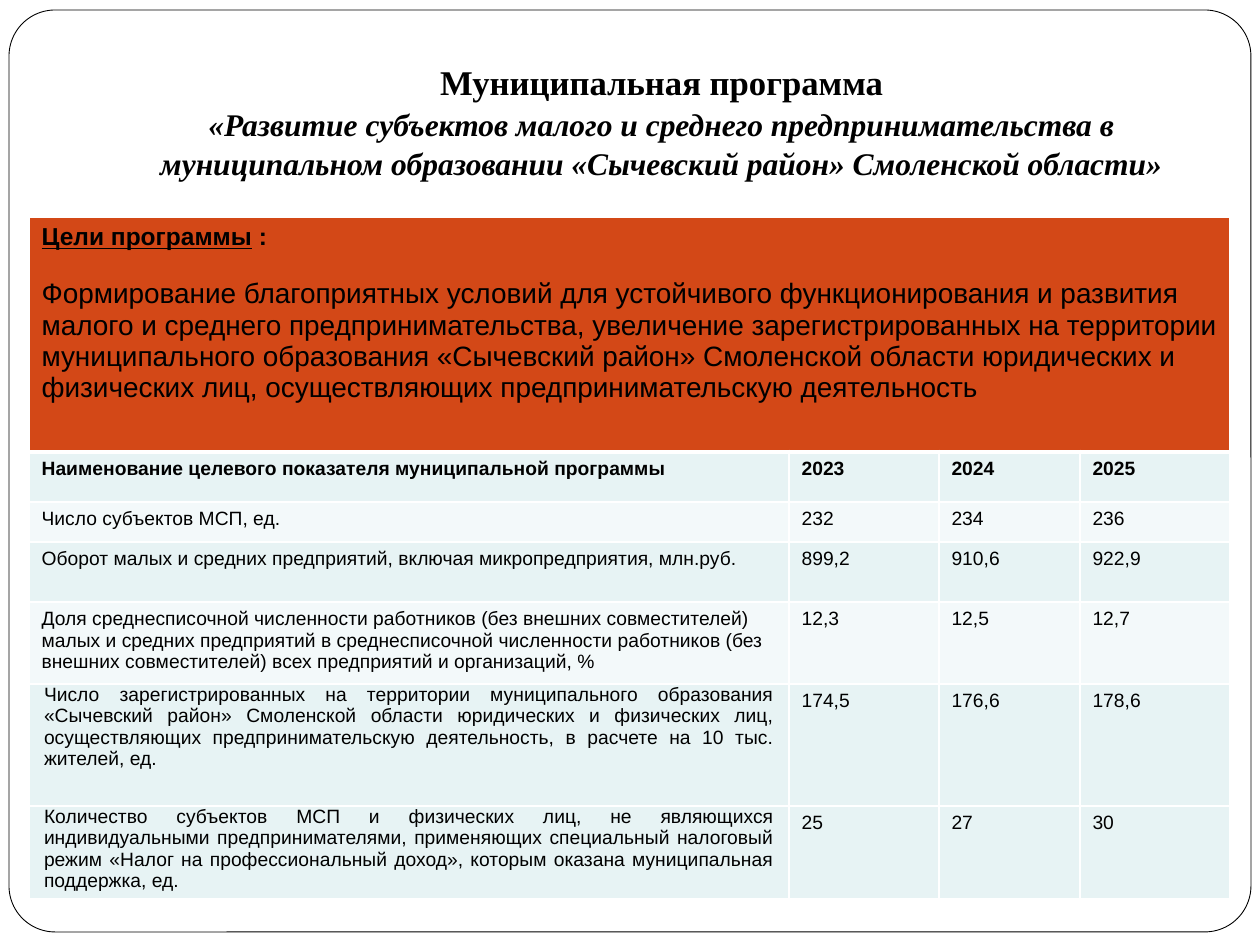
from lxml import etree
from pptx import Presentation
from pptx.dml.color import RGBColor
from pptx.enum.shapes import MSO_SHAPE
from pptx.enum.text import MSO_ANCHOR, PP_ALIGN
from pptx.oxml.ns import qn
from pptx.util import Pt

ROUNDED = MSO_SHAPE.ROUNDED_RECTANGLE
BOTTOM = MSO_ANCHOR.BOTTOM
LEFT, CENTER, JUSTIFY = PP_ALIGN.LEFT, PP_ALIGN.CENTER, PP_ALIGN.JUSTIFY

PX = 914400 // 126
BLACK = RGBColor(0, 0, 0)
WHITE = RGBColor(255, 255, 255)
ORANGE = RGBColor(0xD3, 0x48, 0x17)
BAND_DARK = RGBColor(0xE7, 0xF3, 0xF4)
BAND_LIGHT = RGBColor(0xF3, 0xF9, 0xFA)

TITLE = "Муниципальная программа"
SUBTITLE = (
    "«Развитие субъектов малого и среднего предпринимательства в "
    "муниципальном образовании «Сычевский район» Смоленской области»"
)
GOAL_HEADING = "Цели программы"
GOAL = (
    "Формирование благоприятных условий для устойчивого функционирования и развития "
    "малого и среднего предпринимательства, увеличение зарегистрированных на территории "
    "муниципального образования «Сычевский район» Смоленской области юридических и "
    "физических лиц, осуществляющих предпринимательскую деятельность"
)
# Indicator, yearly values, fill, row height, justified
INDICATORS = [
    ("Наименование целевого показателя муниципальной программы",
     ("2023", "2024", "2025"), BAND_DARK, 50, False),
    ("Число субъектов МСП, ед.",
     ("232", "234", "236"), BAND_LIGHT, 40, False),
    ("Оборот малых и средних предприятий, включая микропредприятия, млн.руб.",
     ("899,2", "910,6", "922,9"), BAND_DARK, 60, False),
    ("Доля среднесписочной численности работников (без внешних совместителей) "
     "малых и средних предприятий в среднесписочной численности работников (без "
     "внешних совместителей) всех предприятий и организаций, %",
     ("12,3", "12,5", "12,7"), BAND_LIGHT, 82, False),
    ("Число зарегистрированных на территории муниципального образования "
     "«Сычевский район» Смоленской области юридических и физических лиц, "
     "осуществляющих предпринимательскую деятельность, в расчете на 10 тыс. жителей, ед.",
     ("174,5", "176,6", "178,6"), BAND_DARK, 122, True),
    ("Количество субъектов МСП и физических лиц, не являющихся "
     "индивидуальными предпринимателями, применяющих специальный налоговый "
     "режим «Налог на профессиональный доход», которым оказана муниципальная поддержка, ед.",
     ("25", "27", "30"), BAND_DARK, 92, True),
]
COLUMN_WIDTHS = [760, 150, 141, 150]
GOAL_HEIGHT = 235
TABLE_LEFT, TABLE_TOP = 29, 217


def px(*lengths):
    return [length * PX for length in lengths]


def add_run(paragraph, text, size, name="Arial", bold=False, italic=False, underline=False):
    run = paragraph.add_run()
    run.text = text
    font = run.font
    font.name, font.size = name, Pt(size)
    font.bold, font.italic, font.underline = bold, italic, underline
    font.color.rgb = BLACK


def set_borders(cell, top=1, bottom=1):
    """Draw white cell borders, then the fill must follow them in the XML."""
    properties = cell._tc.get_or_add_tcPr()
    for side, width in (("L", 1), ("R", 1), ("T", top), ("B", bottom)):
        line = etree.SubElement(properties, qn(f"a:ln{side}"), w=str(Pt(width)))
        fill = etree.SubElement(line, qn("a:solidFill"))
        etree.SubElement(fill, qn("a:srgbClr"), val=str(WHITE))


def style_cell(cell, color, top=1, bottom=1):
    set_borders(cell, top, bottom)
    cell.fill.solid()
    cell.fill.fore_color.rgb = color


def add_frame(slide):
    frame = slide.shapes.add_shape(ROUNDED, *px(9, 10, 1242, 922))
    frame.adjustments[0] = 0.05
    frame.shadow.inherit = False
    frame.fill.solid()
    frame.fill.fore_color.rgb = WHITE
    frame.line.color.rgb = BLACK
    frame.line.width = Pt(0.5)


def add_title(slide):
    text_frame = slide.shapes.add_textbox(*px(126, 38, 1071, 157)).text_frame
    text_frame.word_wrap = True
    text_frame.vertical_anchor = BOTTOM
    text_frame.margin_bottom = 13 * PX
    heading = text_frame.paragraphs[0]
    subtitle = text_frame.add_paragraph()
    add_run(heading, TITLE, 19.8, "Times New Roman", bold=True)
    add_run(subtitle, SUBTITLE, 18, "Times New Roman", bold=True, italic=True)
    for paragraph in (heading, subtitle):
        paragraph.alignment = CENTER
        paragraph.line_spacing = 1.05


def add_goal(table):
    cells = [table.cell(0, column) for column in range(len(COLUMN_WIDTHS))]
    cells[0].merge(cells[-1])
    for cell in cells:
        style_cell(cell, ORANGE, bottom=3)
    text_frame = cells[0].text_frame
    heading = text_frame.paragraphs[0]
    add_run(heading, GOAL_HEADING, 14, bold=True, underline=True)
    add_run(heading, " :", 14, bold=True)
    goal = text_frame.add_paragraph()
    goal.space_before = Pt(16)
    add_run(goal, GOAL, 16)


def add_indicators(table):
    for row, (name, values, color, _, justified) in enumerate(INDICATORS, start=1):
        is_header = row == 1
        for column, text in enumerate((name, *values)):
            cell = table.cell(row, column)
            style_cell(cell, color, top=3 if is_header else 1)
            paragraph = cell.text_frame.paragraphs[0]
            paragraph.alignment = LEFT
            if justified and column == 0:
                paragraph.alignment = JUSTIFY
                cell.margin_left = cell.margin_right = 15 * PX
                cell.margin_top = cell.margin_bottom = 0
            add_run(paragraph, text, 11, bold=is_header)


def add_program_table(slide):
    heights = [GOAL_HEIGHT] + [indicator[3] for indicator in INDICATORS]
    table = slide.shapes.add_table(
        len(heights), len(COLUMN_WIDTHS),
        *px(TABLE_LEFT, TABLE_TOP, sum(COLUMN_WIDTHS), sum(heights)),
    ).table
    for column, width in zip(table.columns, COLUMN_WIDTHS):
        column.width = width * PX
    for row, height in zip(table.rows, heights):
        row.height = height * PX
    add_goal(table)
    add_indicators(table)


def main():
    presentation = Presentation()
    presentation.slide_width, presentation.slide_height = px(1260, 945)
    slide = presentation.slides.add_slide(presentation.slide_layouts[6])
    add_frame(slide)
    add_title(slide)
    add_program_table(slide)
    presentation.save("out.pptx")


if __name__ == "__main__":
    main()
